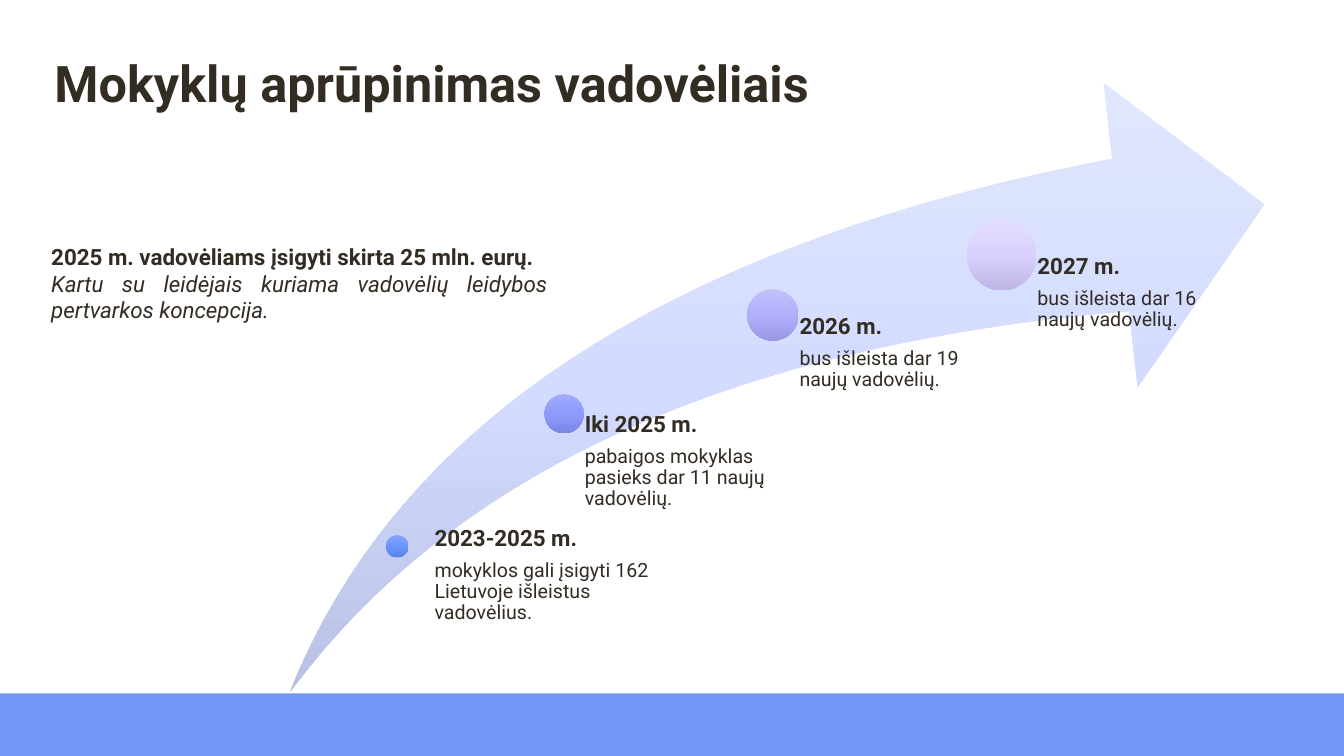
"""Build the slide on supplying schools with textbooks."""
from copy import deepcopy
from dataclasses import dataclass

from pptx import Presentation
from pptx.dml.color import RGBColor
from pptx.enum.shapes import MSO_SHAPE
from pptx.enum.text import MSO_ANCHOR, MSO_AUTO_SIZE, PP_ALIGN
from pptx.oxml.ns import qn
from pptx.shapes.autoshape import Shape
from pptx.slide import Slide
from pptx.text.text import TextFrame, _Paragraph
from pptx.util import Inches, Pt

Box = tuple[float, float, float, float]
Gradient = tuple[str, str, str]


@dataclass(frozen=True)
class Theme:
    font: str = "Roboto"
    text: str = "322C23"
    band: str = "7198F8"
    arrow: Gradient = ("E0E6FD", "D3DCFE", "B9C2E5")
    title_size: int = 36
    heading_size: int = 16
    body_size: int = 14
    line_spacing: float = 0.9
    paragraph_gap: float = 6.5


@dataclass(frozen=True)
class Milestone:
    heading: str
    lines: tuple[str, ...]
    dot: tuple[float, float, float]
    label: Box
    inset: float
    colors: Gradient


THEME = Theme()

MILESTONES = (
    Milestone("2023-2025 m.", ("mokyklos gali įsigyti 162 Lietuvoje išleistus", "vadovėlius."),
              (3.83, 5.31, 0.22), (4.19, 5.23, 2.44, 1.81), 0.12,
              ("84A4FB", "6A95FF", "5C83E5")),
    Milestone("Iki 2025 m.", ("pabaigos mokyklas pasieks dar 11 naujų vadovėlių.",),
              (5.4, 3.91, 0.39), (5.6, 4.1, 2.03, 2.76), 0.2,
              ("A1ACFA", "8D9BFD", "7A87E5")),
    Milestone("2026 m.", ("bus išleista dar 19 naujų vadovėlių.",),
              (7.41, 2.87, 0.51), (7.66, 3.13, 2.03, 3.73), 0.27,
              ("C1BFFB", "B2AFFD", "9A97E5")),
    Milestone("2027 m.", ("bus išleista dar 16 naujų vadovėlių.",),
              (9.59, 2.19, 0.69), (9.93, 2.53, 2.03, 4.33), 0.36,
              ("E3DCFC", "D9D0FD", "BEB5E5")),
)


def place(shape: Shape, box: Box) -> None:
    shape.left, shape.top, shape.width, shape.height = map(Inches, box)


def add_plain_shape(slide: Slide, kind: MSO_SHAPE, box: Box) -> Shape:
    shape = slide.shapes.add_shape(kind, *map(Inches, box))
    shape.shadow.inherit = False
    shape.line.fill.background()
    return shape


def fill_gradient(shape: Shape, colors: Gradient) -> None:
    shape.fill.gradient()
    shape.fill.gradient_angle = 270
    stop_list = shape.element.spPr.find(".//" + qn("a:gsLst"))
    stop_list.append(deepcopy(stop_list[-1]))
    for index, (stop, color) in enumerate(zip(shape.fill.gradient_stops, colors)):
        stop.position = index / 2
        stop.color.rgb = RGBColor.from_string(color)


def add_run(paragraph: _Paragraph, text: str, size: int,
            bold: bool = False, italic: bool = False) -> None:
    run = paragraph.add_run()
    run.text = text
    run.font.name = THEME.font
    run.font.size = Pt(size)
    run.font.bold = bold
    run.font.italic = italic
    run.font.color.rgb = RGBColor.from_string(THEME.text)


def set_insets(frame: TextFrame, left: float = 0) -> None:
    frame.margin_left = Inches(left)
    frame.margin_top = frame.margin_right = frame.margin_bottom = 0


def add_title(slide: Slide) -> None:
    title = slide.shapes.title
    place(title, (0.54, 0.55, 8.81, 0.62))
    frame = title.text_frame
    set_insets(frame)
    frame.auto_size = MSO_AUTO_SIZE.NONE
    frame.vertical_anchor = MSO_ANCHOR.MIDDLE
    paragraph = frame.paragraphs[0]
    paragraph.alignment = PP_ALIGN.LEFT
    paragraph.line_spacing = THEME.line_spacing
    add_run(paragraph, "Mokyklų aprūpinimas vadovėliais", THEME.title_size, bold=True)


def add_milestone(slide: Slide, milestone: Milestone) -> None:
    left, top, diameter = milestone.dot
    dot = add_plain_shape(slide, MSO_SHAPE.OVAL, (left, top, diameter, diameter))
    fill_gradient(dot, milestone.colors)

    frame = slide.shapes.add_textbox(*map(Inches, milestone.label)).text_frame
    frame.word_wrap = True
    set_insets(frame, milestone.inset)
    heading, body = frame.paragraphs[0], frame.add_paragraph()
    for paragraph in (heading, body):
        paragraph.line_spacing = THEME.line_spacing
        paragraph.space_after = Pt(THEME.paragraph_gap)
    add_run(heading, milestone.heading, THEME.heading_size, bold=True)
    for index, line in enumerate(milestone.lines):
        if index:
            body.add_line_break()
        add_run(body, line, THEME.body_size)


def add_summary(slide: Slide) -> None:
    frame = slide.shapes.add_textbox(*map(Inches, (0.41, 2.36, 5.12, 0.91))).text_frame
    frame.word_wrap = True
    frame.auto_size = MSO_AUTO_SIZE.SHAPE_TO_FIT_TEXT
    funding, concept = frame.paragraphs[0], frame.add_paragraph()
    for paragraph in (funding, concept):
        paragraph.alignment = PP_ALIGN.JUSTIFY
    add_run(funding, "2025 m. vadovėliams įsigyti skirta 25 mln. eurų.",
            THEME.heading_size, bold=True)
    add_run(concept, "Kartu su leidėjais kuriama vadovėlių leidybos pertvarkos koncepcija.",
            THEME.heading_size, italic=True)


def main() -> None:
    presentation = Presentation()
    presentation.slide_width = Inches(13.33)
    presentation.slide_height = Inches(7.5)
    slide = presentation.slides.add_slide(presentation.slide_layouts[5])

    band = add_plain_shape(slide, MSO_SHAPE.RECTANGLE, (0, 6.88, 13.33, 0.62))
    band.fill.solid()
    band.fill.fore_color.rgb = RGBColor.from_string(THEME.band)
    add_title(slide)

    arrow = add_plain_shape(slide, MSO_SHAPE.SWOOSH_ARROW, (2.88, 0.82, 9.66, 6.04))
    arrow.adjustments[0] = arrow.adjustments[1] = 0.25
    fill_gradient(arrow, THEME.arrow)
    for milestone in MILESTONES:
        add_milestone(slide, milestone)
    add_summary(slide)
    presentation.save("out.pptx")


if __name__ == "__main__":
    main()
